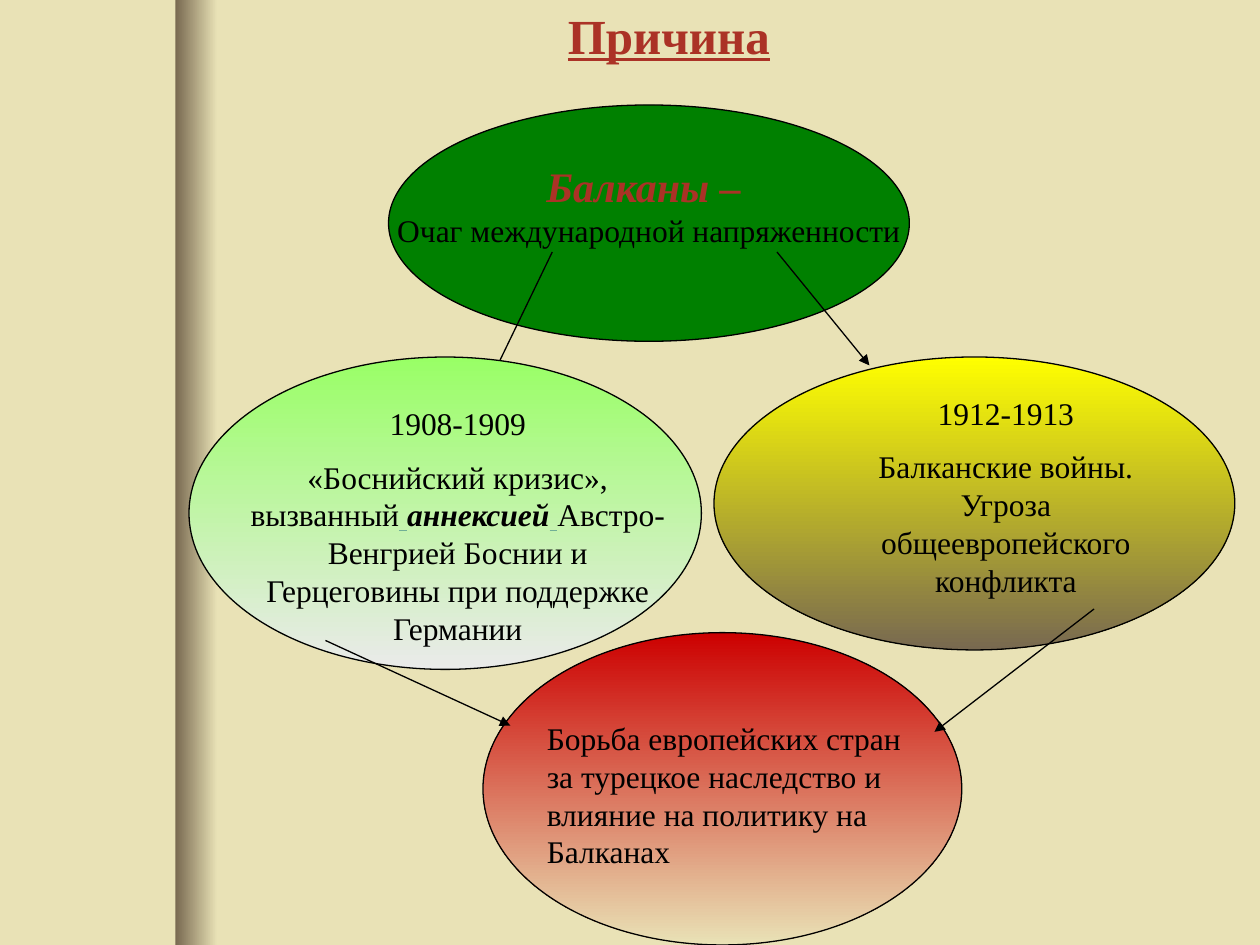
from dataclasses import dataclass

from lxml.etree import SubElement
from pptx import Presentation
from pptx.dml.color import RGBColor
from pptx.enum.shapes import MSO_CONNECTOR, MSO_SHAPE
from pptx.enum.text import MSO_ANCHOR, MSO_AUTO_SIZE, PP_ALIGN
from pptx.oxml.ns import qn
from pptx.util import Inches, Pt


@dataclass(frozen=True)
class Theme:
    """Hold the colours, type sizes and line width of the slide."""
    font: str = "Times New Roman"
    paper: str = "E9E2B6"
    shade: str = "786950"
    ink: str = "000000"
    accent: str = "AB3226"
    link: str = "71AF96"
    hotbed: str = "008000"
    crisis: tuple = ("99FF66", "EAEAEA")
    wars: tuple = ("FFFF00", "786950")
    struggle: tuple = ("CC0000", "E9E2B6")
    title: float = 28
    lead: float = 24
    body: float = 18
    line: float = 0.75


THEME = Theme()
COLS, ROWS = 120, 90
WIDTH, HEIGHT = Inches(10), Inches(7.5)


def rgb(value):
    """Turn a hex string into a colour."""
    return RGBColor.from_string(value)


def place(x, y, w, h):
    """Convert a box in grid units to slide lengths."""
    cx, cy = WIDTH / COLS, HEIGHT / ROWS
    return round(x * cx), round(y * cy), round(w * cx), round(h * cy)


def paint(sp, fill, angle=270):
    """Fill a shape with one colour or a two-colour gradient."""
    sp.shadow.inherit = False
    if isinstance(fill, str):
        sp.fill.solid()
        sp.fill.fore_color.rgb = rgb(fill)
        return
    sp.fill.gradient()
    sp.fill.gradient_angle = angle
    for stop, color, position in zip(sp.fill.gradient_stops, fill, (0, 1)):
        stop.color.rgb = rgb(color)
        stop.position = position


def set_font(font, size, color=THEME.ink, **flags):
    """Apply the theme font with a size, a colour and style flags."""
    font.name, font.size, font.color.rgb = THEME.font, Pt(size), rgb(color)
    for name, value in flags.items():
        setattr(font, name, value)


def set_frame(tf, wrap=True, anchor=MSO_ANCHOR.TOP):
    """Set the margins, wrapping and anchor of a text frame."""
    tf.auto_size = MSO_AUTO_SIZE.NONE
    tf.word_wrap, tf.vertical_anchor = wrap, anchor
    tf.margin_left = tf.margin_right = Inches(0.09)
    tf.margin_top = tf.margin_bottom = Inches(0.04)


def add_band(slide, box):
    """Draw the shaded spine beside the left margin."""
    sp = slide.shapes.add_shape(MSO_SHAPE.RECTANGLE, *place(*box))
    paint(sp, (THEME.shade, THEME.paper), 0)
    sp.line.fill.background()


def add_title(slide, box, text):
    """Move and format the title placeholder."""
    sp = slide.shapes.title
    sp.left, sp.top, sp.width, sp.height = place(*box)
    set_frame(sp.text_frame)
    p = sp.text_frame.paragraphs[0]
    p.text, p.alignment = text, PP_ALIGN.LEFT
    set_font(p.font, THEME.title, THEME.accent, bold=True, underline=True)


def add_ellipse(slide, box, fill):
    """Draw an outlined ellipse."""
    sp = slide.shapes.add_shape(MSO_SHAPE.OVAL, *place(*box))
    paint(sp, fill)
    sp.line.color.rgb, sp.line.width = rgb(THEME.ink), Pt(THEME.line)
    return sp


def add_hotbed(slide, box, lead, text):
    """Draw the top ellipse with its two centred lines."""
    tf = add_ellipse(slide, box, THEME.hotbed).text_frame
    set_frame(tf, False, MSO_ANCHOR.MIDDLE)
    tf.margin_bottom = Inches(0.33)
    first, second = tf.paragraphs[0], tf.add_paragraph()
    first.text, second.text = lead, text
    first.alignment = second.alignment = PP_ALIGN.CENTER
    set_font(first.font, THEME.lead, THEME.accent, bold=True, italic=True)
    set_font(second.font, THEME.body)


def add_event(slide, box, fill, inset, paragraphs, align=PP_ALIGN.CENTER):
    """Draw an ellipse and its text box, inset from the ellipse's box."""
    add_ellipse(slide, box, fill)
    dx, dy, w, h = inset
    sp = slide.shapes.add_textbox(*place(box[0] + dx, box[1] + dy, w, h))
    tf = sp.text_frame
    set_frame(tf)
    for i, runs in enumerate(paragraphs):
        p = tf.add_paragraph() if i else tf.paragraphs[0]
        p.alignment = align
        if i:
            p.space_before = Pt(THEME.body / 2)
        set_font(p.font, THEME.body)
        for text, style in runs:
            r = p.add_run()
            r.text = text
            if style:
                set_font(r.font, THEME.body, **style)


def add_arrow(slide, start, end):
    """Draw an arrow between two grid points."""
    x1, y1, x2, y2 = place(*start, *end)
    line = slide.shapes.add_connector(MSO_CONNECTOR.STRAIGHT, x1, y1, x2, y2)
    line.line.color.rgb, line.line.width = rgb(THEME.ink), Pt(THEME.line)
    SubElement(line.line._get_or_add_ln(), qn("a:tailEnd"), type="triangle")
    SubElement(line._element.spPr, qn("a:effectLst"))


def build_slide(prs):
    """Compose the diagram of causes."""
    slide = prs.slides.add_slide(prs.slide_layouts[5])
    slide.background.fill.solid()
    slide.background.fill.fore_color.rgb = rgb(THEME.paper)
    add_band(slide, (16.7, 0, 4, ROWS))
    add_title(slide, (53, 0, 30, 6.7), "Причина")
    add_hotbed(slide, (37, 10, 49.6, 22.5),
               "Балканы – ", "Очаг международной напряженности")
    add_arrow(slide, (52.6, 24), (47, 35.6))
    link = {"color": THEME.link, "underline": True}
    strong = {"bold": True, "italic": True}
    add_event(slide, (18, 34, 48.8, 29.75), THEME.crisis, (4, 4, 43.2, 24.7), [
        [("1908-1909", None)],
        [("«Боснийский кризис», вызванный", None),
         (" ", link | strong), ("аннексией", strong), (" ", link),
         ("Австро-Венгрией Боснии и Герцеговины при поддержке Германии", None)],
    ])
    add_event(slide, (68, 34, 49.6, 27.9), THEME.wars, (11, 3, 33.6, 21.1), [
        [("1912-1913", None)],
        [("Балканские войны. Угроза общеевропейского конфликта", None)],
    ])
    add_arrow(slide, (74, 24), (82.8, 34.8))
    add_event(slide, (46, 60.25, 45.6, 29.75), THEME.struggle,
              (5, 7.75, 38.4, 15.6),
              [[("Борьба европейских стран за турецкое наследство и "
                 "влияние на политику на Балканах", None)]], PP_ALIGN.LEFT)
    add_arrow(slide, (31, 61), (48.6, 69.1))
    add_arrow(slide, (104.2, 58), (89, 69.7))


def main():
    """Build and save the presentation."""
    prs = Presentation()
    prs.slide_width, prs.slide_height = WIDTH, HEIGHT
    build_slide(prs)
    prs.save("out.pptx")


if __name__ == "__main__":
    main()
